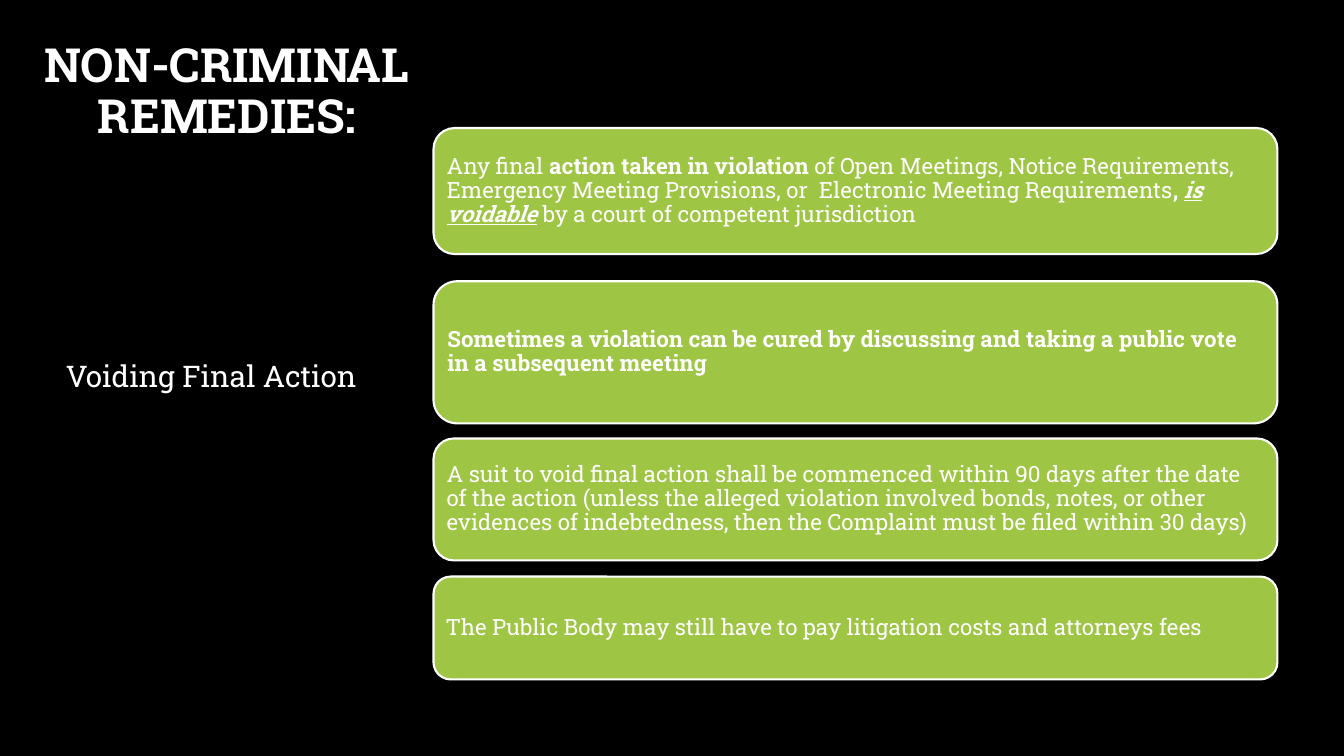
"""Build the slide on voiding final action as a non-criminal remedy."""
import pptx
import pptx.dml.color
import pptx.enum.shapes
import pptx.enum.text
import pptx.util

Inches = pptx.util.Inches
Pt = pptx.util.Pt
ALIGN = pptx.enum.text.PP_ALIGN
ANCHOR = pptx.enum.text.MSO_ANCHOR


def color(hex_string):
    return pptx.dml.color.RGBColor.from_string(hex_string)


def write(frame, runs, size, align, spacing, anchor, bold=None):
    frame.word_wrap = True
    frame.vertical_anchor = anchor
    paragraph = frame.paragraphs[0]
    paragraph.alignment = align
    paragraph.line_spacing = spacing
    paragraph.font.name = "Roboto Slab"
    paragraph.font.size = Pt(size)
    paragraph.font.color.rgb = color("FFFFFF")
    paragraph.font.bold = bold
    for text, style in runs:
        run = paragraph.add_run()
        run.text = text
        if "b" in style:
            run.font.bold = True
        if "i" in style:
            run.font.italic = True
        if "u" in style:
            run.font.underline = True


deck = pptx.Presentation()
deck.slide_width = Inches(13.33)
deck.slide_height = Inches(7.5)
slide = deck.slides.add_slide(deck.slide_layouts[6])
slide.background.fill.solid()
slide.background.fill.fore_color.rgb = color("000000")

split = Inches(4.3)
remedy_width = Inches(8.37)

heading = slide.shapes.add_textbox(Inches(0.1), Inches(0.22), split, Inches(1.25))
write(heading.text_frame, [("NON-CRIMINAL REMEDIES:", "")],
      33.6, ALIGN.CENTER, 0.9, ANCHOR.BOTTOM, bold=True)

topic_top = Inches(3.43)
topic = slide.shapes.add_textbox(0, topic_top, Inches(4.19), deck.slide_height - topic_top)
write(topic.text_frame, [("Voiding Final Action", "")],
      21.3, ALIGN.CENTER, 1.2, ANCHOR.TOP)

remedies = [
    (1.27, 1.25, [
        ("Any final ", ""),
        ("action taken in violation ", "b"),
        ("of Open Meetings, Notice Requirements, Emergency Meeting Provisions, "
         "or  Electronic Meeting Requirements", ""),
        (", ", "b"),
        ("is voidable", "biu"),
        (" ", "bi"),
        ("by a court of competent jurisdiction", ""),
    ]),
    (2.79, 1.41, [
        ("Sometimes a violation can be cured by discussing and taking a public vote "
         "in a subsequent meeting", "b"),
    ]),
    (4.35, 1.21, [
        ("A suit to void final action shall be commenced within 90 days after the date "
         "of the action (unless the alleged violation involved bonds, notes, or other "
         "evidences of indebtedness, then the Complaint must be filed within 30 days)", ""),
    ]),
    (5.72, 1.02, [
        ("The Public Body may still have to pay litigation costs and attorneys fees", ""),
    ]),
]

for top, height, runs in remedies:
    remedy = slide.shapes.add_shape(
        pptx.enum.shapes.MSO_SHAPE.ROUNDED_RECTANGLE,
        split, Inches(top), remedy_width, Inches(height))
    remedy.shadow.inherit = False
    remedy.fill.solid()
    remedy.fill.fore_color.rgb = color("9EC544")
    remedy.line.color.rgb = color("FFFFFF")
    remedy.line.width = Pt(1.5)
    frame = remedy.text_frame
    frame.margin_left = frame.margin_right = Inches(0.07)
    frame.margin_top = frame.margin_bottom = Inches(0.07)
    write(frame, runs, 16, ALIGN.LEFT, 0.9, ANCHOR.MIDDLE)

deck.save("out.pptx")
